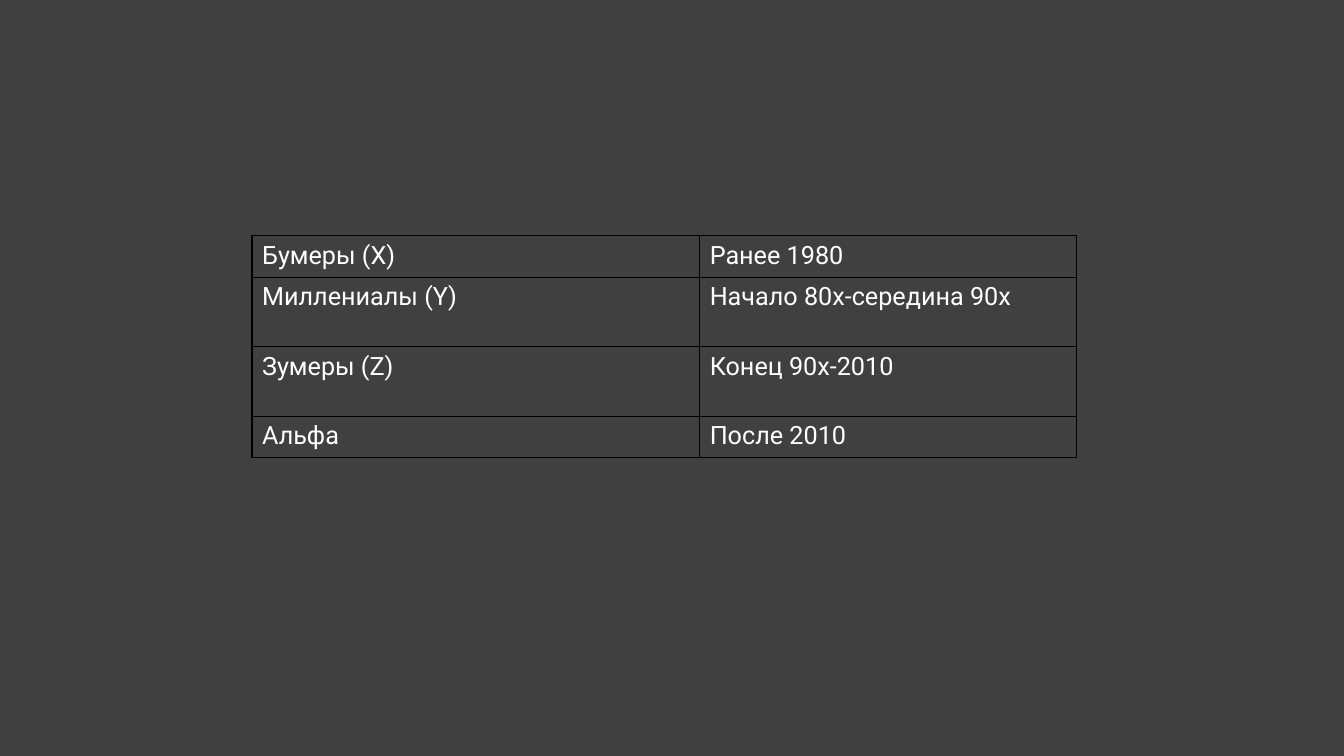
"""Build a slide with a table of generations and their birth years."""
from lxml import etree
from pptx import Presentation
from pptx.dml.color import RGBColor
from pptx.oxml import ns
from pptx.util import Inches, Pt

GENERATIONS = [
    ("Бумеры (Х)", "Ранее 1980", 0.41),
    ("Миллениалы (Y)", "Начало 80х-середина 90х", 0.69),
    ("Зумеры (Z)", "Конец 90х-2010", 0.69),
    ("Альфа", "После 2010", 0.41),
]
COLUMN_WIDTHS = (4.44, 3.74)
LEFT, TOP = 2.5, 2.34
FONT, FONT_SIZE = "Roboto", 18
BORDER_WIDTH = 1
BACKGROUND = RGBColor(0x40, 0x40, 0x40)
WHITE = RGBColor(0xFF, 0xFF, 0xFF)
BLACK = RGBColor(0x00, 0x00, 0x00)


def add_borders(cell):
    """Draw a solid line on all four sides of the cell."""
    properties = cell._tc.get_or_add_tcPr()
    for side in ("a:lnL", "a:lnR", "a:lnT", "a:lnB"):
        line = etree.SubElement(properties, ns.qn(side), w=str(Pt(BORDER_WIDTH)))
        fill = etree.SubElement(line, ns.qn("a:solidFill"))
        etree.SubElement(fill, ns.qn("a:srgbClr"), val=str(BLACK))


def main():
    """Create and save the presentation."""
    deck = Presentation()
    deck.slide_width, deck.slide_height = Inches(13.33), Inches(7.5)
    slide = deck.slides.add_slide(deck.slide_layouts[6])
    slide.background.fill.solid()
    slide.background.fill.fore_color.rgb = BACKGROUND

    total_height = sum(height for _, _, height in GENERATIONS)
    generations = slide.shapes.add_table(
        len(GENERATIONS), len(COLUMN_WIDTHS), Inches(LEFT), Inches(TOP),
        Inches(sum(COLUMN_WIDTHS)), Inches(total_height)).table
    generations.first_row = False
    generations.horz_banding = False
    for column, width in zip(generations.columns, COLUMN_WIDTHS):
        column.width = Inches(width)

    for row, (name, years, height) in zip(generations.rows, GENERATIONS):
        row.height = Inches(height)
        for cell, wording in zip(row.cells, (name, years)):
            cell.text = wording
            font = cell.text_frame.paragraphs[0].font
            font.name, font.size = FONT, Pt(FONT_SIZE)
            font.color.rgb = WHITE
            add_borders(cell)
            cell.fill.background()

    deck.save("out.pptx")


if __name__ == "__main__":
    main()
